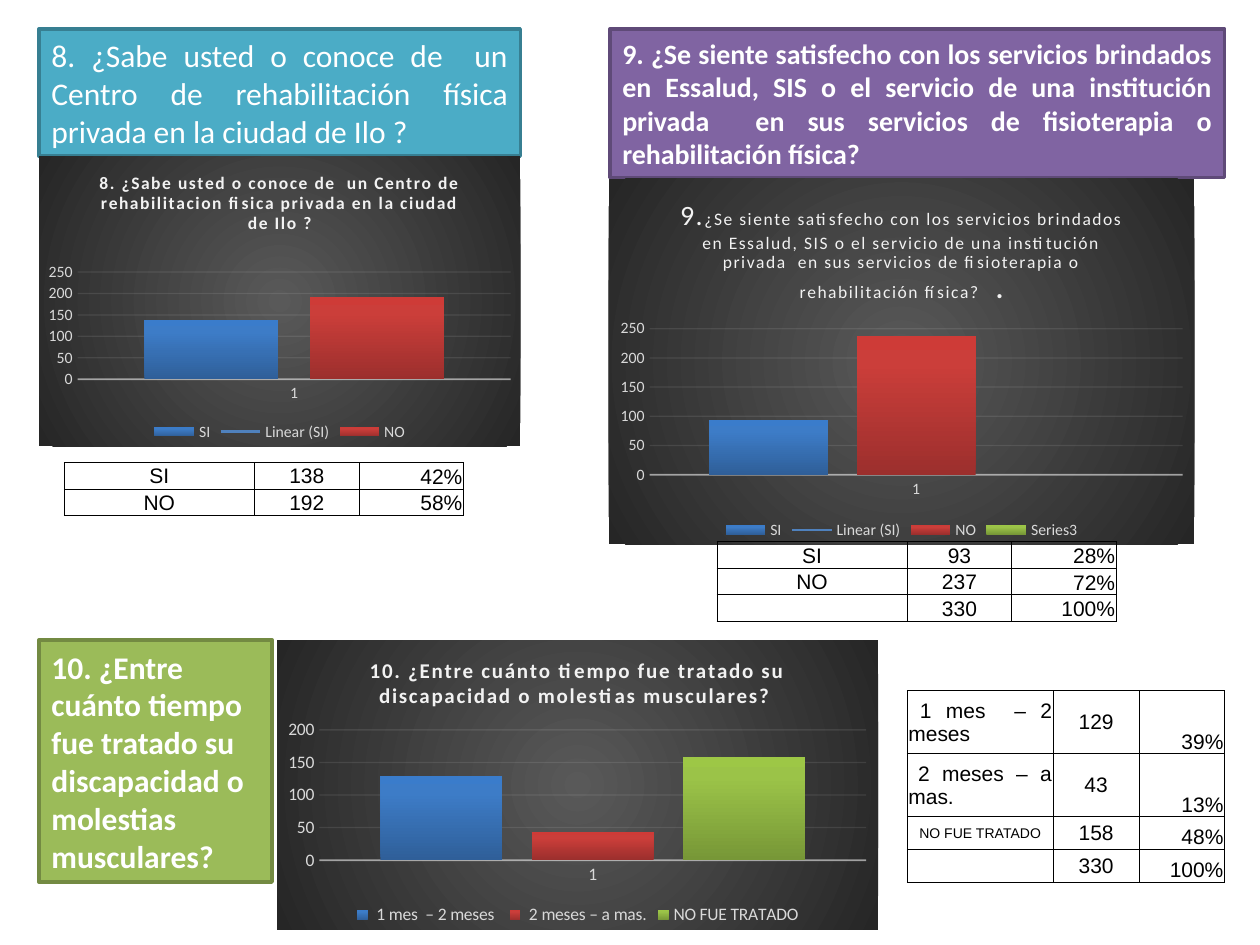
import pptx
import pptx.chart.data
import pptx.dml.color
import pptx.enum.chart
import pptx.enum.shapes
import pptx.enum.text
import pptx.oxml
import pptx.oxml.ns
import pptx.util
from lxml import etree

Inches, Pt = pptx.util.Inches, pptx.util.Pt
rgb = pptx.dml.color.RGBColor.from_string
qn = pptx.oxml.ns.qn
ALIGN = pptx.enum.text.PP_ALIGN
MIDDLE = pptx.enum.text.MSO_ANCHOR.MIDDLE
BOTTOM = pptx.enum.text.MSO_ANCHOR.BOTTOM
NAMESPACES = pptx.oxml.ns.nsdecls("a", "c")


def write_text(paragraph, text, size=12, color="000000", font="Arial",
               bold=False, align=None, spacing=0):
    if align is not None:
        paragraph.alignment = align
    run = paragraph.add_run()
    run.text = text
    run.font.size = Pt(size)
    run.font.name = font
    run.font.bold = bold
    run.font.color.rgb = rgb(color)
    if spacing:
        run._r.get_or_add_rPr().set("spc", str(spacing))


def gradient(stops, direction):
    marks = "".join(f'<a:gs pos="{position * 1000}"><a:srgbClr val="{color}"/></a:gs>'
                    for position, color in stops)
    return pptx.oxml.parse_xml(
        f'<a:gradFill {NAMESPACES} rotWithShape="1"><a:gsLst>{marks}</a:gsLst>{direction}</a:gradFill>')


presentation = pptx.Presentation()
presentation.slide_width, presentation.slide_height = Inches(10), Inches(7.5)
slide = presentation.slides.add_slide(presentation.slide_layouts[6])

# Question boxes
questions = [
    ((0.31, 0.23, 3.82, 1.01), "4BACC6", "377F92", 18, False, ALIGN.JUSTIFY,
     "8. ¿Sabe usted o conoce de  un Centro de rehabilitación física privada en la ciudad de Ilo ?"),
    ((4.84, 0.23, 4.88, 1.18), "8064A2", "5F4A78", 16, True, ALIGN.JUSTIFY,
     "9. ¿Se siente satisfecho con los servicios brindados en Essalud, SIS o el servicio de una "
     "institución privada  en sus servicios de fisioterapia o rehabilitación física? "),
    ((0.31, 5.08, 1.85, 1.92), "9BBB59", "738A42", 18, True, ALIGN.LEFT,
     "10. ¿Entre cuánto tiempo fue tratado su discapacidad o molestias musculares?"),
]
for box, fill, line, size, bold, align, text in questions:
    shape = slide.shapes.add_shape(pptx.enum.shapes.MSO_SHAPE.RECTANGLE, *map(Inches, box))
    shape.shadow.inherit = False
    shape.fill.solid()
    shape.fill.fore_color.rgb = rgb(fill)
    shape.line.color.rgb = rgb(line)
    shape.line.width = Pt(2)
    frame = shape.text_frame
    frame.word_wrap = True
    frame.auto_size = pptx.enum.text.MSO_AUTO_SIZE.SHAPE_TO_FIT_TEXT
    frame.vertical_anchor = MIDDLE
    write_text(frame.paragraphs[0], text, size=size, color="FFFFFF", font="Calibri",
               bold=bold, align=align)

# Column charts: place, axis size, axis maximum, plot area, trend, title runs, series
charts = [
    ((0.31, 1.24, 3.82, 2.3), 9, 250, (0.08, 0.4, 0.9, 0.37), True,
     [("8. ¿Sabe usted o conoce de  un Centro de rehabilitacion fisica privada en la ciudad de Ilo ?",
       10, True)],
     [("SI", 138), ("NO", 192)]),
    ((4.83, 1.42, 4.65, 2.9), 9, 250, (0.07, 0.41, 0.91, 0.4), True,
     [("9.", 16, False),
      ("¿Se siente satisfecho con los servicios brindados en Essalud, SIS o el servicio de una "
       "institución privada  en sus servicios de fisioterapia o rehabilitación física?", 10, False),
      ("  .", 16, True)],
     [("SI", 93), ("NO", 237), ("", 0)]),
    ((2.2, 5.08, 4.77, 2.3), 10, 200, (0.07, 0.31, 0.91, 0.45), False,
     [("10. ¿Entre cuánto tiempo fue tratado su discapacidad o molestias musculares? ", 12, True)],
     [(" 1 mes  – 2 meses ", 129), (" 2 meses – a mas.", 43), ("NO FUE TRATADO", 158)]),
]
series_colors = [("2F5F99", "3D7CC7", "3A7CCB"), ("9C2F2D", "CB3E3A", "CE3B37"),
                 ("779737", "9BC348", "9DC746")]
for box, size, maximum, plot_box, has_trend, title_runs, series_values in charts:
    data = pptx.chart.data.CategoryChartData()
    data.categories = ["1"]
    for name, value in series_values:
        data.add_series(name, [value])
    chart = slide.shapes.add_chart(pptx.enum.chart.XL_CHART_TYPE.COLUMN_CLUSTERED,
                                   *map(Inches, box), data).chart
    chart.font.name = "Calibri"
    chart.font.size = Pt(10)
    chart.has_title = True
    title = chart.chart_title.text_frame.paragraphs[0]
    for text, run_size, bold in title_runs:
        write_text(title, text, size=run_size, color="F2F2F2", font="Calibri",
                   bold=bold, spacing=100)
    chart.has_legend = True
    chart.legend.position = pptx.enum.chart.XL_LEGEND_POSITION.BOTTOM
    chart.legend.include_in_layout = False

    # Axes and gridlines
    value_axis, category_axis = chart.value_axis, chart.category_axis
    for axis in (value_axis, category_axis):
        axis.major_tick_mark = pptx.enum.chart.XL_TICK_MARK.NONE
    for part in (value_axis.tick_labels, category_axis.tick_labels, chart.legend):
        part.font.size = Pt(size)
        part.font.name = "Calibri"
        part.font.color.rgb = rgb("D9D9D9")
    value_axis.minimum_scale, value_axis.maximum_scale, value_axis.major_unit = 0, maximum, 50
    value_axis.format.line.fill.background()
    for line, width in ((category_axis.format.line, 1),
                        (value_axis.major_gridlines.format.line, 0.75)):
        line.color.rgb = rgb("F2F2F2")
        line.width = Pt(width)
    for place, opacity in (("c:catAx/c:spPr", 54), ("c:majorGridlines", 10)):
        for color in chart.element.xpath(f".//{place}//a:srgbClr"):
            etree.SubElement(color, qn("a:alpha")).set("val", str(opacity * 1000))

    # Columns
    plot = chart.plots[0]
    plot.gap_width, plot.overlap, plot.vary_by_categories = 100, -24, False
    for series, colors in zip(plot.series, series_colors):
        series.format.line.fill.background()
        stops = zip((0, 80, 100), colors)
        series._element.spPr.insert(0, gradient(stops, '<a:lin ang="16200000" scaled="0"/>'))
        if not series.name:
            series._element.remove(series._element.find(qn("c:tx")))
    if has_trend:
        chart.element.xpath(".//c:ser[1]/c:cat")[0].addprevious(pptx.oxml.parse_xml(
            f'<c:trendline {NAMESPACES}><c:spPr><a:ln w="19050"><a:solidFill>'
            '<a:srgbClr val="4F81BD"/></a:solidFill></a:ln></c:spPr>'
            '<c:trendlineType val="linear"/><c:dispRSqr val="0"/><c:dispEq val="0"/></c:trendline>'))

    # Plot position and dark background
    for old_layout in chart.element.xpath(".//c:plotArea/c:layout"):
        old_layout.getparent().remove(old_layout)
    sides = "".join(f'<c:{side} val="{value}"/>' for side, value in zip("xywh", plot_box))
    chart.element.xpath(".//c:plotArea")[0].insert(0, pptx.oxml.parse_xml(
        f'<c:layout {NAMESPACES}><c:manualLayout><c:layoutTarget val="inner"/>'
        f'<c:xMode val="edge"/><c:yMode val="edge"/>{sides}</c:manualLayout></c:layout>'))
    background = pptx.oxml.parse_xml(f'<c:spPr {NAMESPACES}><a:ln><a:noFill/></a:ln></c:spPr>')
    background.insert(0, gradient(
        [(0, "595959"), (100, "262626")],
        '<a:path path="circle"><a:fillToRect l="50000" t="50000" r="50000" b="50000"/></a:path>'))
    chart.element.find(qn("c:chart")).addnext(background)

# Result tables: place, column widths, row heights, rows
tables = [
    ((0.51, 3.67), (1.51, 0.83, 0.83), (0.21, 0.21),
     [("SI", "138", "42%"), ("NO", "192", "58%")]),
    ((5.69, 4.3), (1.51, 0.83, 0.83), (0.21, 0.21, 0.21),
     [("SI", "93", "28%"), ("NO", "237", "72%"), ("", "330", "100%")]),
    ((7.2, 5.48), (1.16, 0.68, 0.68), (0.5, 0.5, 0.26, 0.26),
     [("1 mes  – 2 meses ", "129", "39%"), ("2 meses – a mas.", "43", "13%"),
      ("NO FUE TRATADO", "158", "48%"), ("", "330", "100%")]),
]
for position, widths, heights, rows in tables:
    table = slide.shapes.add_table(len(rows), len(widths), *map(Inches, position),
                                   Inches(sum(widths)), Inches(sum(heights))).table
    table.first_row = table.horz_banding = False
    for column, width in zip(table.columns, widths):
        column.width = Inches(width)
    for row, height, texts in zip(table.rows, heights, rows):
        row.height = Inches(height)
        for index, (cell, text) in enumerate(zip(row.cells, texts)):
            cell.fill.background()
            cell.margin_left = cell.margin_right = cell.margin_top = Inches(0.01)
            cell.margin_bottom = 0
            cell.vertical_anchor = BOTTOM if index == 2 else MIDDLE
            paragraph = cell.text_frame.paragraphs[0]
            align = ALIGN.RIGHT if index == 2 else ALIGN.CENTER
            if "mes" in text:
                align = ALIGN.JUSTIFY
                write_text(paragraph, " ", size=7, font="Times New Roman")
            if text:
                write_text(paragraph, text, size=8 if "TRATADO" in text else 12, align=align)
            else:
                etree.SubElement(paragraph._p, qn("a:endParaRPr")).set("sz", "1200")
            for order, side in enumerate("LRTB"):
                cell._tc.get_or_add_tcPr().insert(order, pptx.oxml.parse_xml(
                    f'<a:ln{side} {NAMESPACES} w="6350"><a:solidFill><a:srgbClr val="000000"/>'
                    f'</a:solidFill></a:ln{side}>'))

presentation.save("out.pptx")
